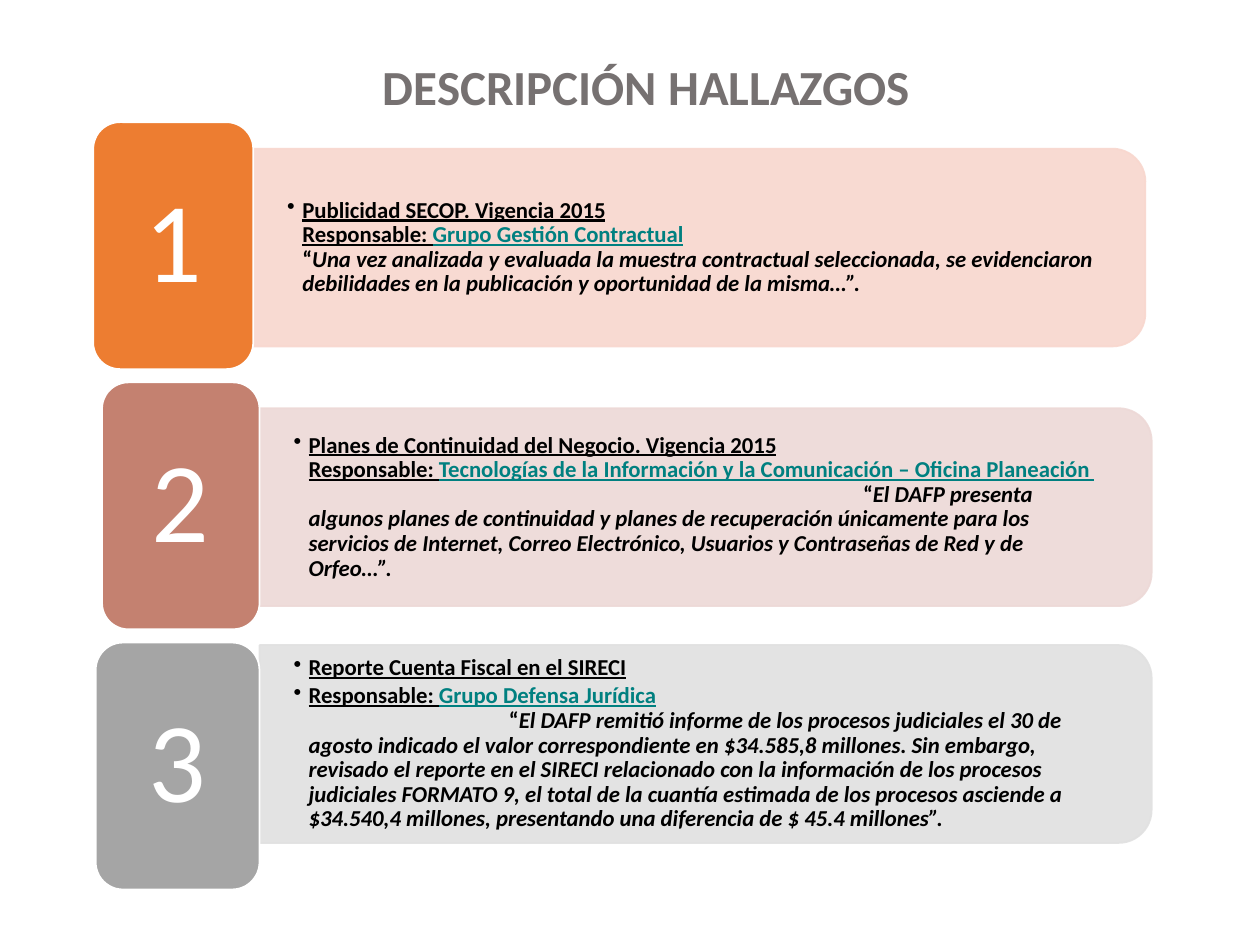
from copy import deepcopy

from lxml import etree
from pptx import Presentation
from pptx.dml.color import RGBColor
from pptx.enum.shapes import MSO_SHAPE
from pptx.enum.text import MSO_ANCHOR, PP_ALIGN
from pptx.oxml.ns import qn
from pptx.util import Inches, Pt

ROUND, PANEL = MSO_SHAPE.ROUNDED_RECTANGLE, MSO_SHAPE.ROUND_2_SAME_RECTANGLE
MIDDLE, CENTER = MSO_ANCHOR.MIDDLE, PP_ALIGN.CENTER

BLACK = RGBColor(0x00, 0x00, 0x00)
WHITE = RGBColor(0xFF, 0xFF, 0xFF)
TEAL = RGBColor(0x00, 0x80, 0x80)
TITLE_GRAY = RGBColor(0x76, 0x71, 0x71)
ORANGE, PEACH = RGBColor(0xED, 0x7D, 0x31), RGBColor(0xF8, 0xD7, 0xCE)
CLAY, ROSE = RGBColor(0xC4, 0x81, 0x70), RGBColor(0xED, 0xD9, 0xD7)
GRAY, SILVER = RGBColor(0xA5, 0xA5, 0xA5), RGBColor(0xE1, 0xE1, 0xE1)

FONT = "Calibri"
STYLES = {
    "head": {"underline": True},
    "owner": {"underline": True, "color": TEAL},
    "plain": {},
    "quote": {"italic": True},
}
BREAK = ("break", "")

TITLE = "DESCRIPCIÓN HALLAZGOS"
# Tab stops, in inches from the text's indent, end the underlined rules.
FINDINGS = [
    {"badge": ORANGE, "panel": PEACH, "left": 0.74, "split": 2.01, "panel_top": 1.18,
     "tabs": (6.03, 6.16),
     "paragraphs": [[
         ("head", "Publicidad SECOP. Vigencia 2015\t"), BREAK,
         ("head", "Responsable: "), ("owner", "Grupo Gestión Contractual"),
         ("head", "\t\t"), BREAK, ("plain", "“"),
         ("quote", "Una vez analizada y evaluada la muestra contractual seleccionada, "
                   "se evidenciaron debilidades en la publicación y oportunidad de la "
                   "misma…”.")]]},
    {"badge": CLAY, "panel": ROSE, "left": 0.81, "split": 2.06, "panel_top": 3.24,
     "tabs": (4.4, 5.38),
     "paragraphs": [[
         ("head", "Planes de Continuidad del Negocio. Vigencia 2015\t"), BREAK,
         ("head", "Responsable: "),
         ("owner", "Tecnologías de la Información y la Comunicación – Oficina Planeación "),
         BREAK, ("plain", "\t“"),
         ("quote", "El DAFP presenta algunos planes de continuidad y planes de "
                   "recuperación únicamente para los servicios de Internet, Correo "
                   "Electrónico, Usuarios y Contraseñas de Red y de Orfeo…”.")]]},
    {"badge": GRAY, "panel": SILVER, "left": 0.76, "split": 2.06, "panel_top": 5.12,
     "tabs": (1.59, 6.3),
     "paragraphs": [
         [("head", "Reporte Cuenta Fiscal en el SIRECI")],
         [("head", "Responsable: "), ("owner", "Grupo Defensa Jurídica"),
          ("head", "\t"), BREAK, ("head", "\t"), ("plain", "“"),
          ("quote", "El DAFP remitió informe de los procesos judiciales el 30 de agosto "
                    "indicado el valor correspondiente en $34.585,8 millones. Sin embargo, "
                    "revisado el reporte en el SIRECI relacionado con la información de "
                    "los procesos judiciales FORMATO 9, el total de la cuantía estimada de "
                    "los procesos asciende a $34.540,4 millones, presentando una "
                    "diferencia de $ 45.4 millones”.")]]},
]

BADGE_TOP, BADGE_PITCH, BADGE_H = 0.97, 2.065, 1.96
PANEL_W, PANEL_H = 7.08, 1.57
TEXT_W, TEXT_H = 7, 1.42
INDENT = 0.12


def format_font(font, size, color=BLACK, **values):
    font.name, font.size = FONT, Pt(size)
    font.color.rgb = color
    for name, value in values.items():
        setattr(font, name, value)


def set_frame(tf, side, end):
    tf.word_wrap, tf.vertical_anchor = True, MIDDLE
    tf.margin_left = tf.margin_right = Inches(side)
    tf.margin_top = tf.margin_bottom = Inches(end)


def add_block(shapes, kind, box, fill, line):
    s = shapes.add_shape(kind, *map(Inches, box))
    s.shadow.inherit = False
    s.fill.solid()
    s.fill.fore_color.rgb = fill
    s.line.color.rgb = line
    s.line.width = Pt(1)
    return s


def add_panel(shapes, left, top, color):
    """Panel with rounded right corners: a top-rounded shape turned a quarter."""
    shift = (PANEL_W - PANEL_H) / 2
    s = add_block(shapes, PANEL, (left + shift, top - shift, PANEL_H, PANEL_W), color, color)
    s.rotation = 90
    for clr in s._element.spPr.iter(qn("a:srgbClr")):
        etree.SubElement(clr, qn("a:alpha"), val="90000")


def add_bullet(p, tabs):
    pPr = p._p.get_or_add_pPr()
    pPr.set("marL", str(Inches(INDENT)))
    pPr.set("indent", str(-Inches(INDENT)))
    p.line_spacing, p.space_after = 0.9, Pt(2)
    etree.SubElement(pPr, qn("a:buChar"), char="•")
    stops = etree.SubElement(pPr, qn("a:tabLst"))
    for tab in tabs:
        etree.SubElement(stops, qn("a:tab"), pos=str(Inches(tab + INDENT)), algn="l")


def add_runs(p, parts):
    for style, text in parts:
        if style == "break":
            p.add_line_break()
            p._p[-1].append(deepcopy(r._r.rPr))
        else:
            r = p.add_run()
            r.text = text
            format_font(r.font, 13, bold=True, **STYLES[style])


def add_finding(shapes, i, item):
    split, top = item["split"], item["panel_top"]
    add_panel(shapes, split, top, item["panel"])
    box = (split, top + (PANEL_H - TEXT_H) / 2, TEXT_W, TEXT_H)
    tf = shapes.add_textbox(*map(Inches, box)).text_frame
    set_frame(tf, 0.27, 0.14)
    for n, parts in enumerate(item["paragraphs"]):
        p = tf.add_paragraph() if n else tf.paragraphs[0]
        add_bullet(p, item["tabs"])
        add_runs(p, parts)

    box = (item["left"], BADGE_TOP + i * BADGE_PITCH, split - item["left"], BADGE_H)
    badge = add_block(shapes, ROUND, box, item["badge"], WHITE)
    set_frame(badge.text_frame, 0.27, 0.14)
    p = badge.text_frame.paragraphs[0]
    p.text, p.alignment, p.line_spacing = str(i + 1), CENTER, 0.9
    format_font(p.runs[0].font, 65, WHITE)


def main():
    prs = Presentation()
    prs.slide_width, prs.slide_height = Inches(10), Inches(7.5)
    slide = prs.slides.add_slide(prs.slide_layouts[5])
    title = slide.shapes.title
    title.left, title.top, title.width, title.height = map(Inches, (0.33, 0.4, 9.6, 0.57))
    set_frame(title.text_frame, 0.1, 0.05)
    p = title.text_frame.paragraphs[0]
    p.text, p.alignment = TITLE, CENTER
    format_font(p.runs[0].font, 28, TITLE_GRAY, bold=True)
    for i, item in enumerate(FINDINGS):
        add_finding(slide.shapes, i, item)
    prs.save("out.pptx")


if __name__ == "__main__":
    main()
